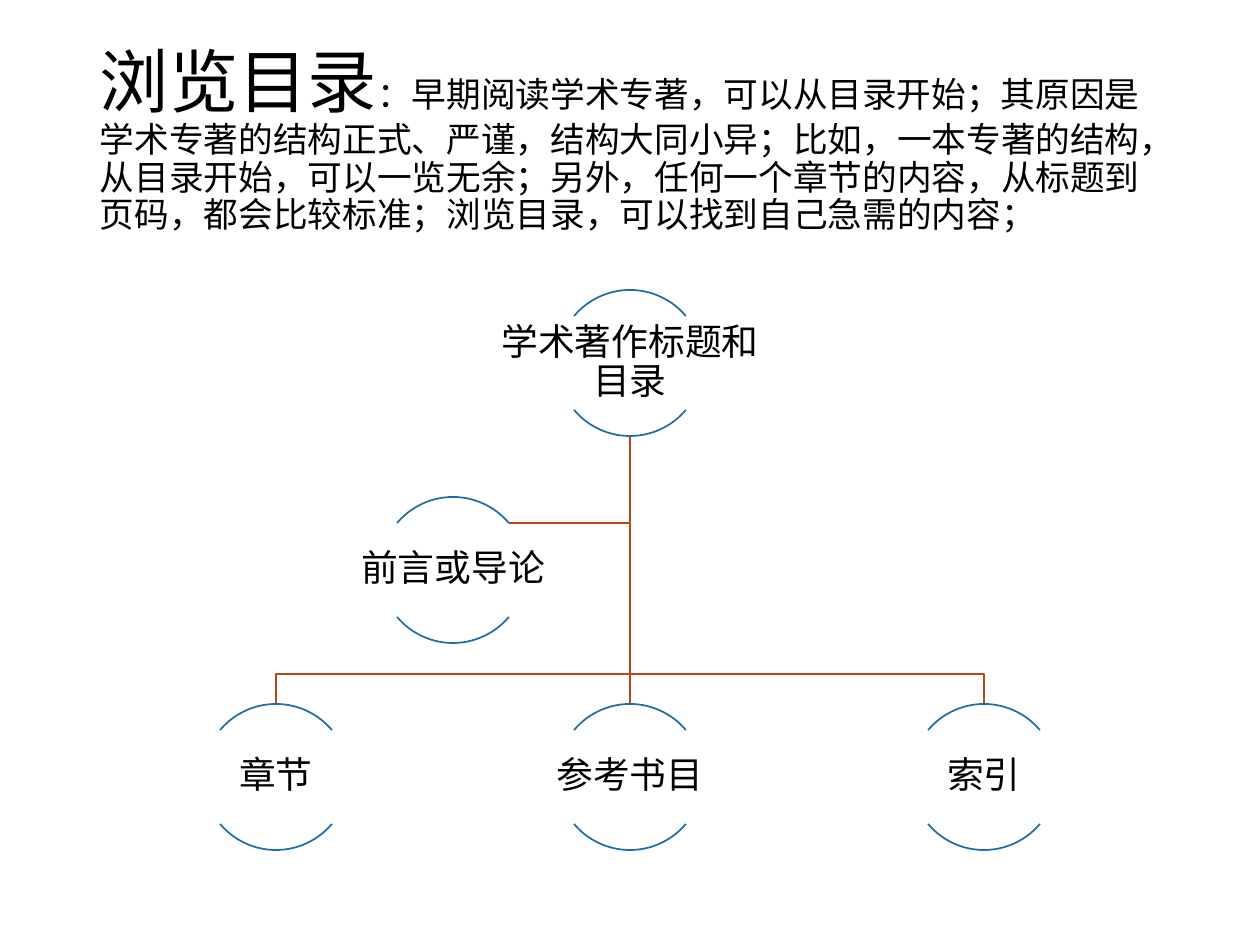
from dataclasses import dataclass

from lxml.etree import SubElement
from pptx import Presentation
from pptx.dml.color import RGBColor
from pptx.enum.shapes import MSO_CONNECTOR as Connector, MSO_SHAPE as Shape
from pptx.enum.text import MSO_ANCHOR as Anchor, PP_ALIGN as Align
from pptx.oxml.ns import qn
from pptx.util import Pt

EMU_PER_PX = 914400 / 126


@dataclass(frozen=True)
class Theme:
    font: str = "Times New Roman"
    ink: RGBColor = RGBColor(0x00, 0x00, 0x00)
    arc: RGBColor = RGBColor(0x1D, 0x6F, 0xA9)
    branch: RGBColor = RGBColor(0xB7, 0x49, 0x19)
    line_width: float = 1
    heading_size: float = 39.6
    intro_size: float = 19.8
    node_size: float = 21
    line_spacing: float = 0.9


THEME = Theme()
NODE = 146
LABEL_WIDTH, LABEL_HEIGHT = 292, 93
COLUMN_STEP, ROW_STEP = 354, 207
TOP_ARC, BOTTOM_ARC = (132, 192), (24, 84)
ARC_HALF_WIDTH, ARC_DEPTH = 56, 26
BRANCH_GAP = 30

HEADING = "浏览目录"
INTRO = (
    "：早期阅读学术专著，可以从目录开始；其原因是学术专著的结构正式、严谨，"
    "结构大同小异；比如，一本专著的结构，从目录开始，可以一览无余；另外，"
    "任何一个章节的内容，从标题到页码，都会比较标准；浏览目录，"
    "可以找到自己急需的内容；"
)
ROOT = "学术著作标题和目录"
ASSISTANT = "前言或导论"
CHILDREN = ("章节", "参考书目", "索引")


def px(*lengths):
    return [round(length * EMU_PER_PX) for length in lengths]


def style_run(run, size):
    run.font.name = THEME.font
    run.font.size = Pt(size)
    run.font.color.rgb = THEME.ink


def style_line(line, color):
    line.color.rgb = color
    line.width = Pt(THEME.line_width)


def add_text(slide, box, inset_x, inset_y):
    textbox = slide.shapes.add_textbox(*px(*box))
    frame = textbox.text_frame
    frame.word_wrap = True
    frame.vertical_anchor = Anchor.MIDDLE
    frame.margin_left, frame.margin_right = px(inset_x, inset_x)
    frame.margin_top, frame.margin_bottom = px(inset_y, inset_y)
    paragraph = frame.paragraphs[0]
    paragraph.line_spacing = THEME.line_spacing
    return paragraph


def add_heading(slide, box):
    paragraph = add_text(slide, box, 13, 6)
    for wording, size in ((HEADING, THEME.heading_size), (INTRO, THEME.intro_size)):
        run = paragraph.add_run()
        run.text = wording
        style_run(run, size)


def add_node(slide, center, top, wording):
    for start, end in (TOP_ARC, BOTTOM_ARC):
        arc = slide.shapes.add_shape(
            Shape.ARC, *px(center - NODE / 2, top, NODE, NODE)
        )
        arc.adjustments[0], arc.adjustments[1] = start, end
        arc.shadow.inherit = False
        arc.fill.background()
        style_line(arc.line, THEME.arc)
    label_top = top + (NODE - LABEL_HEIGHT) / 2
    label_box = (center - LABEL_WIDTH / 2, label_top, LABEL_WIDTH, LABEL_HEIGHT)
    paragraph = add_text(slide, label_box, 1, 1)
    paragraph.text = wording
    paragraph.alignment = Align.CENTER
    style_run(paragraph.runs[0], THEME.node_size)


def add_elbow(slide, start, *corners):
    builder = slide.shapes.build_freeform(*start, scale=EMU_PER_PX)
    builder.add_line_segments(corners, close=False)
    elbow = builder.convert_to_shape()
    elbow.shadow.inherit = False
    elbow.fill.background()
    style_line(elbow.line, THEME.branch)


def add_trunk(slide, start, end):
    trunk = slide.shapes.add_connector(Connector.STRAIGHT, *px(*start, *end))
    style_line(trunk.line, THEME.branch)
    SubElement(trunk.line._get_or_add_ln().getparent(), qn("a:effectLst"))


def add_hierarchy(slide, box):
    left, top, width, _ = box
    middle = left + width / 2
    assistant_center = middle - COLUMN_STEP / 2
    assistant_top = top + ROW_STEP
    child_top = top + 2 * ROW_STEP
    child_centers = [middle + offset * COLUMN_STEP for offset in (-1, 0, 1)]
    root_foot = (middle, top + NODE)
    joint = assistant_top + ARC_DEPTH
    crossbar = child_top - BRANCH_GAP

    add_elbow(slide, root_foot, (middle, joint),
              (assistant_center + ARC_HALF_WIDTH, joint))
    for center in child_centers:
        if center == middle:
            add_trunk(slide, root_foot, (middle, child_top))
        else:
            add_elbow(slide, root_foot, (middle, crossbar),
                      (center, crossbar), (center, child_top))

    add_node(slide, middle, top, ROOT)
    for center, wording in zip(child_centers, CHILDREN):
        add_node(slide, center, child_top, wording)
    add_node(slide, assistant_center, assistant_top, ASSISTANT)


def main():
    presentation = Presentation()
    presentation.slide_width, presentation.slide_height = px(1260, 945)
    slide = presentation.slides.add_slide(presentation.slide_layouts[6])
    add_heading(slide, (87, 50, 1086, 183))
    add_hierarchy(slide, (130, 290, 1000, 560))
    presentation.save("out.pptx")


if __name__ == "__main__":
    main()
